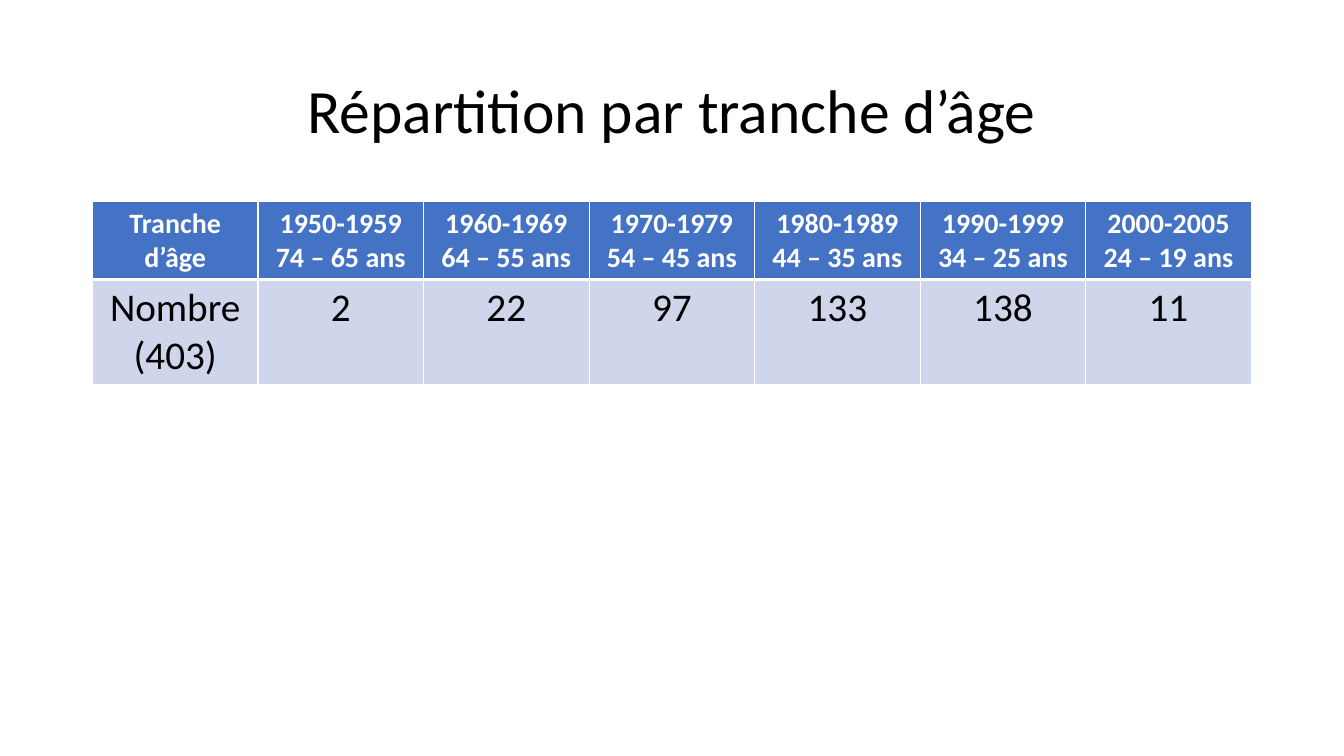
from lxml import etree
from pptx import Presentation
from pptx.dml.color import RGBColor
from pptx.enum import text
from pptx.oxml import ns
from pptx.util import Cm, Pt

LEFT, WIDTH = Cm(2.33), Cm(29.21)
BANDS = [
    ("1950-1959", "74 – 65 ans", 2),
    ("1960-1969", "64 – 55 ans", 22),
    ("1970-1979", "54 – 45 ans", 97),
    ("1980-1989", "44 – 35 ans", 133),
    ("1990-1999", "34 – 25 ans", 138),
    ("2000-2005", "24 – 19 ans", 11),
]


def paint(fmt, color):
    """Give a fill or a font a solid colour."""
    if hasattr(fmt, "solid"):
        fmt.solid()
        fmt.fore_color.rgb = RGBColor.from_string(color)
    else:
        fmt.color.rgb = RGBColor.from_string(color)


def write(frame, words, size, color, bold=False):
    frame.text = words
    for par in frame.paragraphs:
        par.alignment = text.PP_ALIGN.CENTER
        par.font.name = "Calibri"
        par.font.size = Pt(size)
        par.font.bold = bold
        paint(par.font, color)


def edge(cell, side, width, color="FFFFFF"):
    """Draw one border; sides must come in the order L, R, T, B."""
    props = cell._tc.get_or_add_tcPr()
    line = etree.SubElement(props, ns.qn(f"a:ln{side}"), w=str(Pt(width)))
    fill = etree.SubElement(line, ns.qn("a:solidFill"))
    etree.SubElement(fill, ns.qn("a:srgbClr"), val=color)


def add_title(slide, words):
    box = slide.shapes.add_textbox(LEFT, Cm(1.01), WIDTH, Cm(3.68))
    frame = box.text_frame
    frame.word_wrap = True
    frame.vertical_anchor = text.MSO_ANCHOR.MIDDLE
    write(frame, words, 44, "000000")
    frame.paragraphs[0].line_spacing = 0.9


def add_row(table, index, height, words, size, color, fill, bold, rules):
    """Fill one row; rules are the top and bottom border widths."""
    table.rows[index].height = height
    for cell, label in zip(table.rows[index].cells, words):
        write(cell.text_frame, label, size, color, bold)
        for side, width in zip("LRTB", (1, 1, *rules)):
            edge(cell, side, width)
        paint(cell.fill, fill)


def add_ages(slide):
    heads = ["Tranche d’âge"] + [f"{years}\n{ages}" for years, ages, _ in BANDS]
    counts = ["Nombre (403)"] + [str(count) for _, _, count in BANDS]
    high, low = Cm(1.96), Cm(2.64)
    frame = slide.shapes.add_table(2, len(heads), LEFT, Cm(5.08), WIDTH, high + low)
    table = frame.table
    add_row(table, 0, high, heads, 20, "FFFFFF", "4472C4", True, (1, 3))
    add_row(table, 1, low, counts, 28, "000000", "CFD5EA", False, (3, 1))


def main():
    deck = Presentation()
    deck.slide_width, deck.slide_height = Cm(33.87), Cm(19.05)
    slide = deck.slides.add_slide(deck.slide_layouts[6])
    add_title(slide, "Répartition par tranche d’âge")
    add_ages(slide)
    deck.save("out.pptx")


if __name__ == "__main__":
    main()
